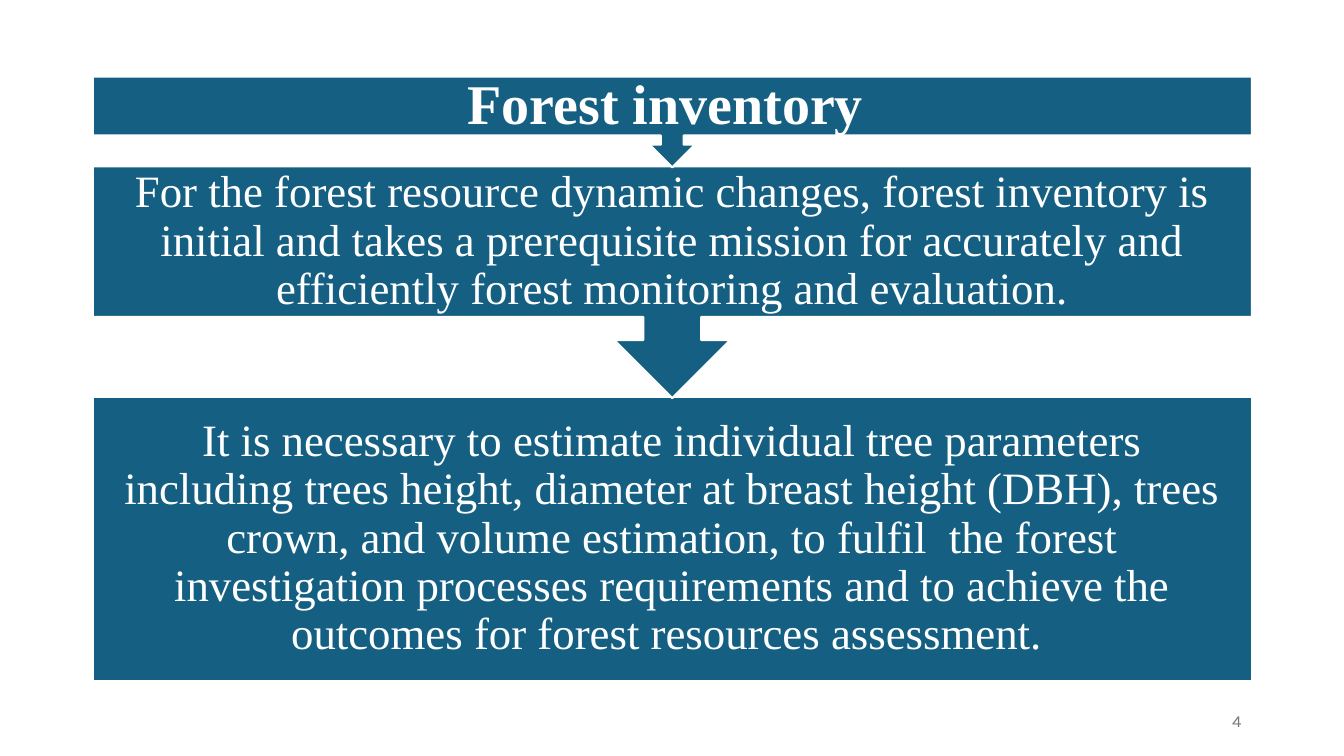
from dataclasses import dataclass

import pptx
import pptx.dml.color
import pptx.enum.shapes
import pptx.enum.text
import pptx.util

Pt = pptx.util.Pt
SHAPE = pptx.enum.shapes.MSO_SHAPE
ALIGN = pptx.enum.text.PP_ALIGN

COLORS = {"box": "156082", "white": "FFFFFF", "number": "797979"}
SERIF = "Times New Roman"
LEFT, WIDTH = 66.25, 828


@dataclass
class Step:
    top: float
    height: float
    kind: SHAPE
    text: str = ""


# Listed from back to front; the top step is labelled by the slide title
STEPS = [
    Step(283.2, 203, SHAPE.RECTANGLE,
         "It is necessary to estimate individual tree parameters including trees height, "
         "diameter at breast height (DBH), trees crown, and volume estimation, to fulfil  "
         "the forest investigation processes requirements and to achieve the outcomes for "
         "forest resources assessment. "),
    Step(118.8, 165.6, SHAPE.DOWN_ARROW_CALLOUT,
         "For the forest resource dynamic changes, forest inventory is initial and takes a "
         "prerequisite mission for accurately and efficiently forest monitoring and "
         "evaluation."),
    Step(54.75, 64.8, SHAPE.DOWN_ARROW_CALLOUT),
]
TITLE_HEIGHT = 42.1


def rgb(name: str) -> pptx.dml.color.RGBColor:
    return pptx.dml.color.RGBColor.from_string(COLORS[name])


def write(sp, text: str, size: float, font: str, color: str, align: ALIGN,
          bold: bool = False, spacing: float = 0.9, side: float = 18) -> None:
    tf = sp.text_frame
    tf.word_wrap = True
    tf.auto_size = pptx.enum.text.MSO_AUTO_SIZE.NONE
    tf.vertical_anchor = pptx.enum.text.MSO_ANCHOR.MIDDLE
    tf.margin_left = tf.margin_right = Pt(side)
    tf.margin_top = tf.margin_bottom = Pt(0)
    p = tf.paragraphs[0]
    p.alignment = align
    p.line_spacing = spacing
    r = p.add_run()
    r.text = text
    r.font.size = Pt(size)
    r.font.name = font
    r.font.bold = bold
    r.font.color.rgb = rgb(color)


def draw_step(s, step: Step) -> None:
    sp = s.shapes.add_shape(step.kind, Pt(LEFT), Pt(step.top), Pt(WIDTH), Pt(step.height))
    sp.shadow.inherit = False
    sp.fill.solid()
    sp.fill.fore_color.rgb = rgb("box")
    sp.line.color.rgb = rgb("white")
    sp.line.width = Pt(1.5)
    if step.text:
        write(sp, step.text, 32, SERIF, "white", ALIGN.CENTER)


def main() -> None:
    prs = pptx.Presentation()
    prs.slide_width, prs.slide_height = Pt(960), Pt(540)
    s = prs.slides.add_slide(prs.slide_layouts[5])

    # Chain of steps
    for step in STEPS:
        draw_step(s, step)

    # Title, brought in front of the top step
    title = s.shapes.title
    title.left, title.top = Pt(LEFT), Pt(STEPS[-1].top)
    title.width, title.height = Pt(WIDTH), Pt(TITLE_HEIGHT)
    write(title, "Forest inventory ", 40, SERIF, "white", ALIGN.CENTER, bold=True, side=22.3)
    title.element.getparent().append(title.element)

    # Slide number
    number = s.shapes.add_textbox(Pt(678), Pt(500.5), Pt(216), Pt(28.75))
    write(number, "4", 12, "Karla", "number", ALIGN.RIGHT, spacing=1.0, side=7.2)

    prs.save("out.pptx")


if __name__ == "__main__":
    main()
